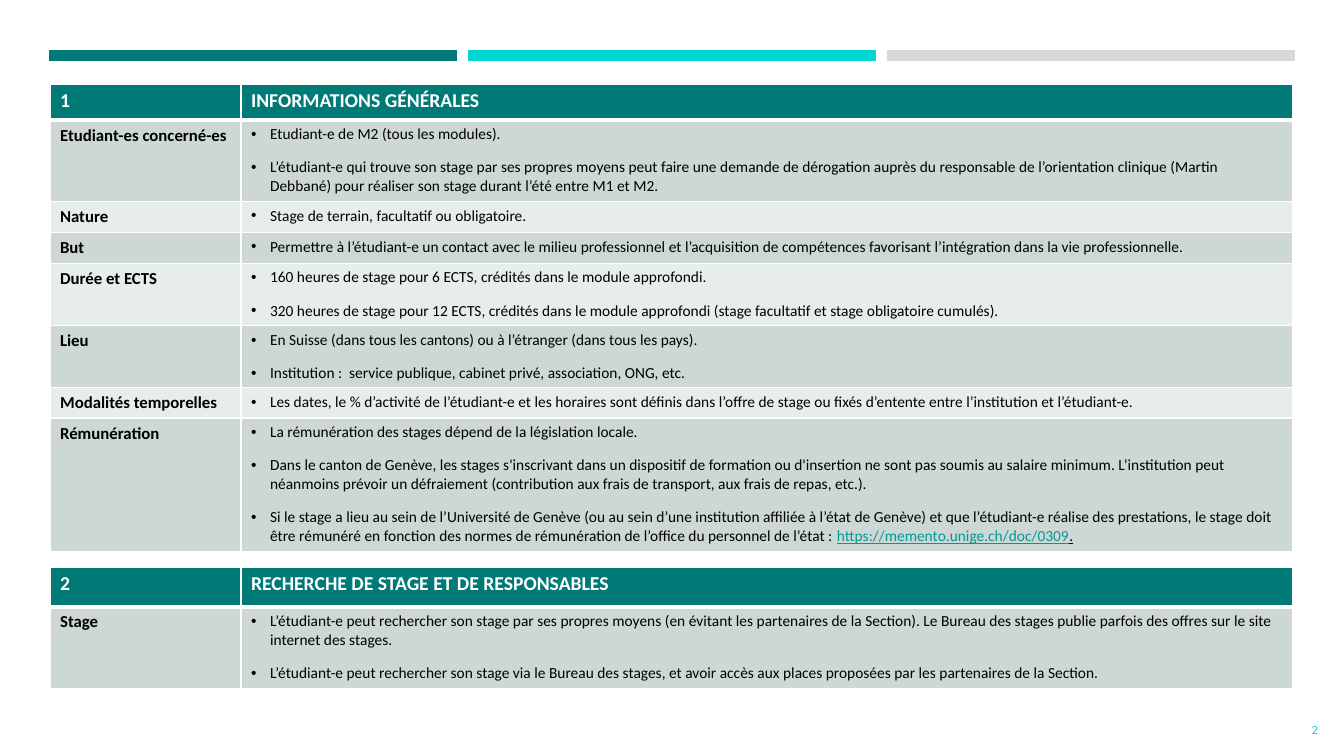
from dataclasses import dataclass

from lxml import etree
from pptx import Presentation
from pptx import util as u
from pptx.dml.color import RGBColor
from pptx.enum import shapes, text
from pptx.oxml import ns

PX = 914400 / 100.8


@dataclass(frozen=True)
class Theme:
    font: str = "Calibri"
    teal: str = "007A77"
    cyan: str = "00D6D1"
    grey: str = "D8D8D8"
    bands: tuple = ("CCD7D6", "E7ECEC")
    white: str = "FFFFFF"
    black: str = "000000"
    link: str = "009A96"
    header_size: int = 14
    label_size: int = 12
    body_size: int = 11
    number_size: int = 9
    gap: int = 10


theme = Theme()
LINK = "https://memento.unige.ch/doc/0309"


def px(length):
    return u.Emu(round(length * PX))


def style(font, size, color, bold=False):
    font.name = theme.font
    font.size = u.Pt(size)
    font.bold = bold
    font.color.rgb = RGBColor.from_string(color)


# Each table: top, then rows of (height, label, content); the first row is the header
tables = [
    (84, [
        (36, "1", ["INFORMATIONS GÉNÉRALES"]),
        (80, "Etudiant-es concerné-es", [
            "Etudiant-e de M2 (tous les modules).",
            "L’étudiant-e qui trouve son stage par ses propres moyens peut faire une demande de dérogation auprès du responsable de l’orientation clinique (Martin Debbané) pour réaliser son stage durant l’été entre M1 et M2."]),
        (31, "Nature", ["Stage de terrain, facultatif ou obligatoire."]),
        (31, "But", [
            "Permettre à l’étudiant-e un contact avec le milieu professionnel et l’acquisition de compétences favorisant l’intégration dans la vie professionnelle."]),
        (62, "Durée et ECTS", [
            "160 heures de stage pour 6 ECTS, crédités dans le module approfondi.",
            "320 heures de stage pour 12 ECTS, crédités dans le module approfondi (stage facultatif et stage obligatoire cumulés)."]),
        (62, "Lieu", [
            "En Suisse (dans tous les cantons) ou à l’étranger (dans tous les pays).",
            "Institution :  service publique, cabinet privé, association, ONG, etc."]),
        (30, "Modalités temporelles", [
            "Les dates, le % d’activité de l’étudiant-e et les horaires sont définis dans l’offre de stage ou fixés d’entente entre l’institution et l’étudiant-e."]),
        (132, "Rémunération", [
            "La rémunération des stages dépend de la législation locale.",
            "Dans le canton de Genève, les stages s'inscrivant dans un dispositif de formation ou d'insertion ne sont pas soumis au salaire minimum. L’institution peut néanmoins prévoir un défraiement (contribution aux frais de transport, aux frais de repas, etc.).",
            "Si le stage a lieu au sein de l’Université de Genève (ou au sein d’une institution affiliée à l’état de Genève) et que l’étudiant-e réalise des prestations, le stage doit être rémunéré en fonction des normes de rémunération de l’office du personnel de l’état : " + LINK + "."]),
    ]),
    (567, [
        (40, "2", ["RECHERCHE DE STAGE ET DE RESPONSABLES"]),
        (80, "Stage", [
            "L’étudiant-e peut rechercher son stage par ses propres moyens (en évitant les partenaires de la Section). Le Bureau des stages publie parfois des offres sur le site internet des stages.",
            "L’étudiant-e peut rechercher son stage via le Bureau des stages, et avoir accès aux places proposées par les partenaires de la Section."]),
    ]),
]

presentation = Presentation()
presentation.slide_width, presentation.slide_height = px(1344), px(756)
slide = presentation.slides.add_slide(presentation.slide_layouts[6])

# Bars across the top
for index, color in enumerate((theme.teal, theme.cyan, theme.grey)):
    bar = slide.shapes.add_shape(
        shapes.MSO_SHAPE.RECTANGLE, px(49 + 419 * index), px(50), px(408), px(11))
    bar.shadow.inherit = False
    bar.fill.solid()
    bar.fill.fore_color.rgb = RGBColor.from_string(color)
    bar.line.fill.background()

# Tables
for top, rows in tables:
    height = sum(row[0] for row in rows)
    table = slide.shapes.add_table(
        len(rows), 2, px(50), px(top), px(1243), px(height)).table
    table.first_row = table.horz_banding = False
    table.columns[0].width, table.columns[1].width = px(191), px(1052)

    for row_index, (row_height, label, content) in enumerate(rows):
        table.rows[row_index].height = px(row_height)
        is_header = row_index == 0
        fill = theme.teal if is_header else theme.bands[(row_index - 1) % 2]

        for column_index, lines in enumerate(([label], content)):
            cell = table.cell(row_index, column_index)
            is_list = column_index == 1 and not is_header

            # White borders, thicker under the header
            properties = cell._tc.get_or_add_tcPr()
            for side in "LRTB":
                thick = (side == "B" and row_index == 0) or (side == "T" and row_index == 1)
                border = etree.SubElement(
                    properties, ns.qn("a:ln" + side), w=str(u.Pt(3 if thick else 1)))
                solid = etree.SubElement(border, ns.qn("a:solidFill"))
                etree.SubElement(solid, ns.qn("a:srgbClr"), val=theme.white)
            cell.fill.solid()
            cell.fill.fore_color.rgb = RGBColor.from_string(fill)

            # Text, bulleted in the right-hand column
            for line_index, line in enumerate(lines):
                frame = cell.text_frame
                paragraph = frame.add_paragraph() if line_index else frame.paragraphs[0]
                if line_index:
                    paragraph.space_before = u.Pt(theme.gap)
                if is_list:
                    bullet = paragraph._p.get_or_add_pPr()
                    bullet.set("marL", str(px(19)))
                    bullet.set("indent", str(px(-19)))
                    etree.SubElement(bullet, ns.qn("a:buFont"), typeface="Arial")
                    etree.SubElement(bullet, ns.qn("a:buChar"), char="•")
                before, link, after = line.partition(LINK)
                paragraph.add_run().text = before
                if link:
                    address, stop = paragraph.add_run(), paragraph.add_run()
                    address.text, stop.text = link, after
                    address.font.underline = stop.font.underline = True
                    address.font.color.rgb = RGBColor.from_string(theme.link)
                if is_header:
                    style(paragraph.font, theme.header_size, theme.white, True)
                elif is_list:
                    style(paragraph.font, theme.body_size, theme.black)
                else:
                    style(paragraph.font, theme.label_size, theme.black, True)

# Slide number
number = slide.shapes.add_textbox(px(1212), px(709), px(116), px(40)).text_frame
number.word_wrap = True
number.vertical_anchor = text.MSO_ANCHOR.MIDDLE
number.paragraphs[0].text = "2"
number.paragraphs[0].alignment = text.PP_ALIGN.RIGHT
style(number.paragraphs[0].font, theme.number_size, theme.cyan)

presentation.save("out.pptx")
